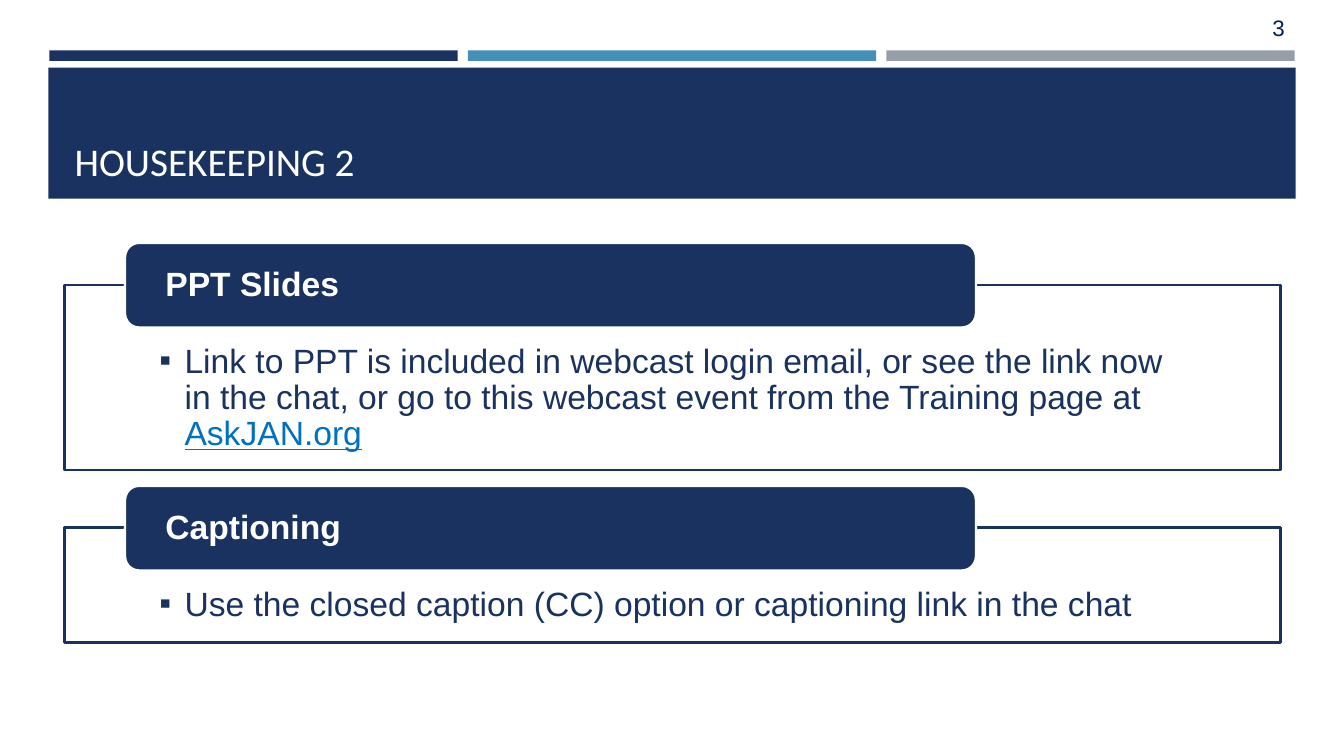
from dataclasses import dataclass

from lxml.etree import SubElement
from pptx import Presentation
from pptx.dml.color import RGBColor as Color
from pptx.enum.shapes import MSO_SHAPE as Shape
from pptx.enum.text import MSO_ANCHOR as Anchor, MSO_AUTO_SIZE as Fit, PP_ALIGN as Align
from pptx.oxml.ns import qn
from pptx.util import Inches, Pt

UNIT = Inches(0.1)  # one column or row of the grid
COLS, ROWS = 133.3, 75


@dataclass(frozen=True)
class Theme:
    navy: str = "1A3260"
    blue: str = "4590B8"
    grey: str = "969FA7"
    white: str = "FFFFFF"
    cream: str = "FFFEFF"
    link: str = "0070C0"
    ink: str = "002060"
    head: str = "Calibri"
    text: str = "Arial"
    title: int = 28
    body: int = 24
    small: int = 16
    line: float = 1.75


def grid(*cells):
    return [round(cell * UNIT) for cell in cells]


def write(para, text, *, font, size, color, bold=False, under=False):
    run = para.add_run()
    run.text = text
    face = run.font
    face.name, face.size = font, Pt(size)
    face.bold, face.underline = bold, under
    face.color.rgb = Color.from_string(color)


def bullet(para, sign, indent):
    props = para._p.get_or_add_pPr()
    props.set("marL", str(indent))
    props.set("indent", str(-indent))
    SubElement(props, qn("a:buFont"), typeface="Arial")
    SubElement(props, qn("a:buChar"), char=sign)


def paint(shape, fill, line=None, width=0):
    shape.fill.solid()
    shape.fill.fore_color.rgb = Color.from_string(fill)
    if line:
        shape.line.color.rgb = Color.from_string(line)
        shape.line.width = Pt(width)
    else:
        shape.line.fill.background()


def setup(shape, anchor, pads=(1, 0.5, 1, 0.5), align=Align.LEFT):
    """Set the frame of a shape's text and return its first paragraph."""
    frame = shape.text_frame
    frame.word_wrap, frame.auto_size = True, Fit.NONE
    frame.vertical_anchor = anchor
    (frame.margin_left, frame.margin_top,
     frame.margin_right, frame.margin_bottom) = grid(*pads)
    para = frame.paragraphs[0]
    para.alignment, para.space_before = align, Pt(0)
    return para


class Deck:
    def __init__(self, theme):
        self.theme = theme
        self.file = Presentation()
        self.file.slide_width, self.file.slide_height = grid(COLS, ROWS)
        self.slide = self.file.slides.add_slide(self.file.slide_layouts[3])
        self.shapes = self.slide.shapes

    def box(self, kind, area, fill, line=None):
        shape = self.shapes.add_shape(kind, *grid(*area))
        shape.shadow.inherit = False
        paint(shape, fill, line, self.theme.line)
        return shape

    def hold(self, slot, area):
        """Move a placeholder to its area, in front of what is drawn so far."""
        shape = self.slide.placeholders[slot]
        shape.left, shape.top, shape.width, shape.height = grid(*area)
        self.shapes._spTree.append(shape._element)
        return shape

    def bars(self):
        look = self.theme
        for i, fill in enumerate((look.navy, look.blue, look.grey)):
            self.box(Shape.RECTANGLE, (4.9 + 41.5 * i, 5, 40.5, 1.05), fill)

    def title(self, text):
        look = self.theme
        self.box(Shape.RECTANGLE, (4.8, 6.7, 123.7, 13), look.navy)
        para = setup(self.hold(0, (6.4, 7.7, 120.6, 11.1)), Anchor.BOTTOM)
        write(para, text, font=look.head, size=look.title, color=look.cream)

    def panel(self, slot, top, high, text, link):
        """Draw a framed list that starts below the middle of its tab."""
        look = self.theme
        frame = self.hold(slot, (6.4, top, 120.6, high))
        paint(frame, look.white, look.navy, look.line)
        para = setup(frame, Anchor.TOP, (9.4, 5.9, 9.4, 1.9))
        bullet(para, "▪", Inches(0.25))
        para.line_spacing, para.space_after = 0.9, Pt(6)
        write(para, text, font=look.text, size=look.body, color=look.navy)
        if link:
            write(para, link, font=look.text, size=look.body,
                  color=look.link, under=True)

    def tab(self, top, text):
        look = self.theme
        shape = self.box(Shape.ROUNDED_RECTANGLE, (12.4, top, 84.4, 8.4),
                         look.navy, look.white)
        para = setup(shape, Anchor.MIDDLE, (3.6, 0, 3.6, 0))
        para.line_spacing = 0.9
        write(para, text, font=look.text, size=look.body,
              color=look.white, bold=True)

    def number(self, text):
        look = self.theme
        shape = self.shapes.add_textbox(*grid(116.9, 0.7, 11.5, 4))
        para = setup(shape, Anchor.MIDDLE, align=Align.RIGHT)
        write(para, text, font=look.text, size=look.small, color=look.ink)


TOPICS = (
    ("PPT Slides", 18.4,
     "Link to PPT is included in webcast login email, or see the link now in "
     "the chat, or go to this webcast event from the Training page at ",
     "AskJAN.org"),
    ("Captioning", 11.4,
     "Use the closed caption (CC) option or captioning link in the chat", ""),
)


def main():
    deck = Deck(Theme())
    deck.bars()
    deck.title("HOUSEKEEPING 2")
    top, drop, gap = 24.1, 4.15, 1.55
    for slot, (name, high, text, link) in enumerate(TOPICS, 1):
        deck.panel(slot, top + drop, high, text, link)
        deck.tab(top, name)
        top += drop + high + gap
    deck.number("3")
    deck.file.save("out.pptx")


if __name__ == "__main__":
    main()
